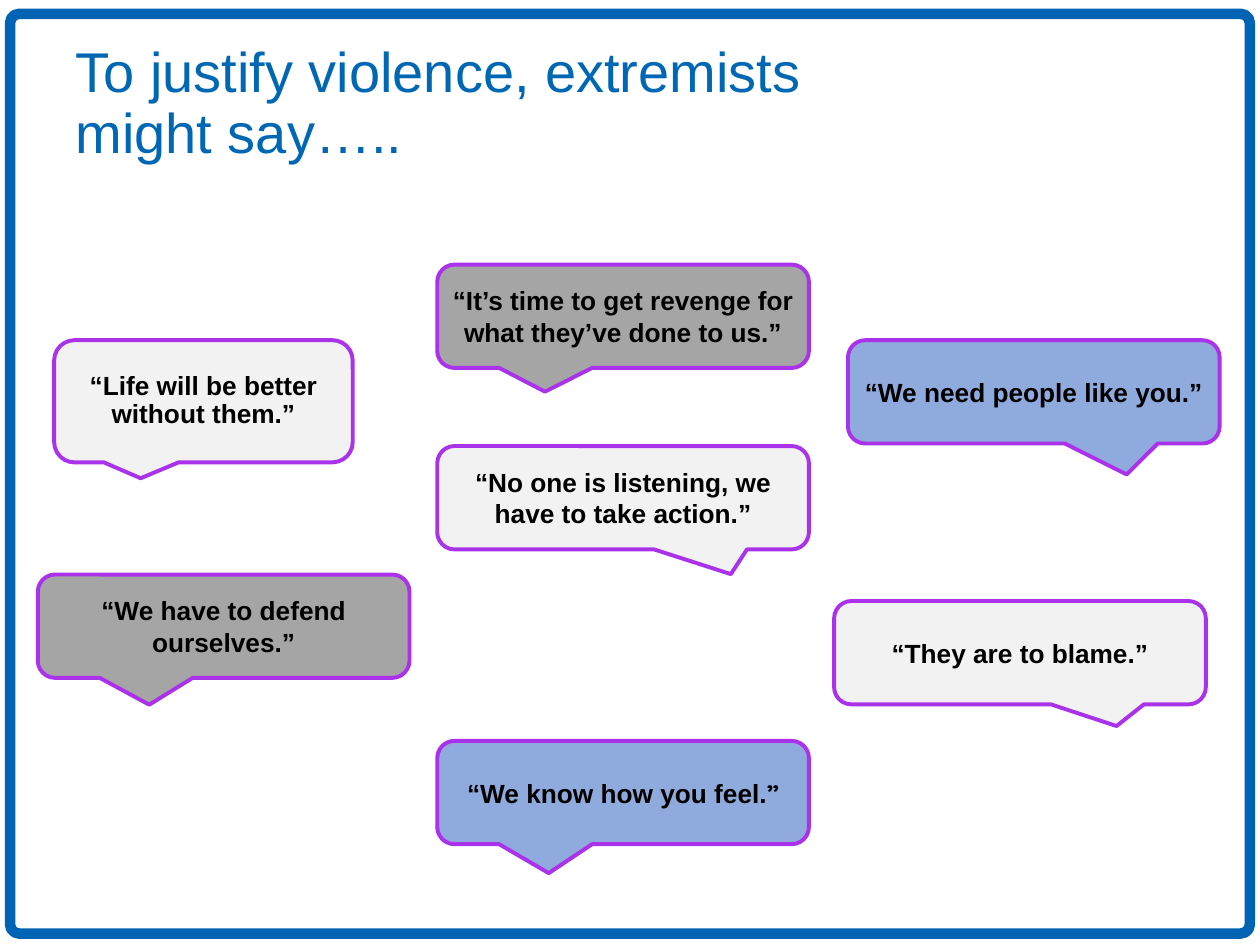
from dataclasses import dataclass

from pptx import Presentation
from pptx.dml.color import RGBColor
from pptx.enum.shapes import MSO_SHAPE
from pptx.enum.text import MSO_ANCHOR, PP_ALIGN
from pptx.util import Inches, Pt


@dataclass(frozen=True)
class Theme:
    frame: str = "0063B3"
    title: str = "0067B4"
    outline: str = "AA32EA"
    ink: str = "000000"
    gray: str = "A5A5A5"
    light: str = "F2F2F2"
    blue: str = "8FAADC"
    font: str = "Arial"
    accent_font: str = "Quicksand"
    title_size: int = 32
    quote_size: int = 15


THEME = Theme()
WIDE = (2.95, 0.82)
SMALL = (2.37, 0.97)

# Position, size, tail offset, fill, text
QUOTES = [
    ((3.47, 2.1), WIDE, (-0.21, 0.73), THEME.gray,
     "“It’s time to get revenge for what they’ve done to us.”"),
    ((3.47, 3.54), WIDE, (0.29, 0.74), THEME.light,
     "“No one is listening, we have to take action.”"),
    ((3.47, 5.88), WIDE, (-0.2, 0.78), THEME.blue, "“We know how you feel."),
    ((6.62, 4.77), WIDE, (0.26, 0.71), THEME.light, "“They are to blame.”"),
    ((6.73, 2.7), WIDE, (0.25, 0.8), THEME.blue, "“We need people like you.”"),
    ((0.43, 2.7), SMALL, (-0.21, 0.63), THEME.light,
     "“Life will be better without them.”"),
    ((0.3, 4.56), WIDE, (-0.2, 0.76), THEME.gray,
     "“We have to defend ourselves.”"),
]


def add_text(p, text, *, size, color, font=THEME.font, bold=False,
             align=PP_ALIGN.LEFT, line_spacing=1.0):
    p.alignment = align
    p.line_spacing = line_spacing
    p.space_before = Pt(0)
    r = p.add_run()
    r.text = text
    r.font.name = font
    r.font.size = Pt(size)
    r.font.bold = bold
    r.font.color.rgb = RGBColor.from_string(color)


def add_outlined(s, kind, pos, size, color, width, adjustments, fill=None):
    sp = s.shapes.add_shape(kind, *map(Inches, pos + size))
    sp.shadow.inherit = False
    sp.line.color.rgb = RGBColor.from_string(color)
    sp.line.width = Pt(width)
    if fill:
        sp.fill.solid()
        sp.fill.fore_color.rgb = RGBColor.from_string(fill)
    else:
        sp.fill.background()
    for i, value in enumerate(adjustments):
        sp.adjustments[i] = value
    return sp


def add_title(s, text):
    sp = s.shapes.title
    sp.left, sp.top, sp.width, sp.height = map(Inches, (0.5, 0.3, 6.63, 1.25))
    tf = sp.text_frame
    tf.word_wrap = True
    tf.vertical_anchor = MSO_ANCHOR.TOP
    add_text(tf.paragraphs[0], text, size=THEME.title_size,
             color=THEME.title, line_spacing=0.9)


def add_quote(s, pos, size, tail, fill, text):
    sp = add_outlined(s, MSO_SHAPE.ROUNDED_RECTANGULAR_CALLOUT, pos, size,
                      THEME.outline, 2.25, (*tail, 0.167), fill)
    tf = sp.text_frame
    tf.word_wrap = True
    tf.vertical_anchor = MSO_ANCHOR.MIDDLE
    tf.margin_left = tf.margin_right = Inches(0.04)
    tf.margin_top = tf.margin_bottom = Inches(0.05)
    style = dict(size=THEME.quote_size, color=THEME.ink, bold=True,
                 align=PP_ALIGN.CENTER,
                 line_spacing=0.9 if size == SMALL else 1.0)
    p = tf.paragraphs[0]
    add_text(p, text, **style)
    # An open quote is closed in the accent font
    if not text.endswith("”"):
        add_text(p, "”", font=THEME.accent_font, **style)


def main():
    prs = Presentation()
    prs.slide_width, prs.slide_height = Inches(10), Inches(7.5)
    s = prs.slides.add_slide(prs.slide_layouts[5])

    # Frame and title
    add_outlined(s, MSO_SHAPE.ROUNDED_RECTANGLE, (0.08, 0.11), (9.84, 7.3),
                 THEME.frame, 6, (0.01,))
    add_title(s, "To justify violence, extremists might say…..")

    # Speech bubbles
    for quote in QUOTES:
        add_quote(s, *quote)

    prs.save("out.pptx")


if __name__ == "__main__":
    main()
